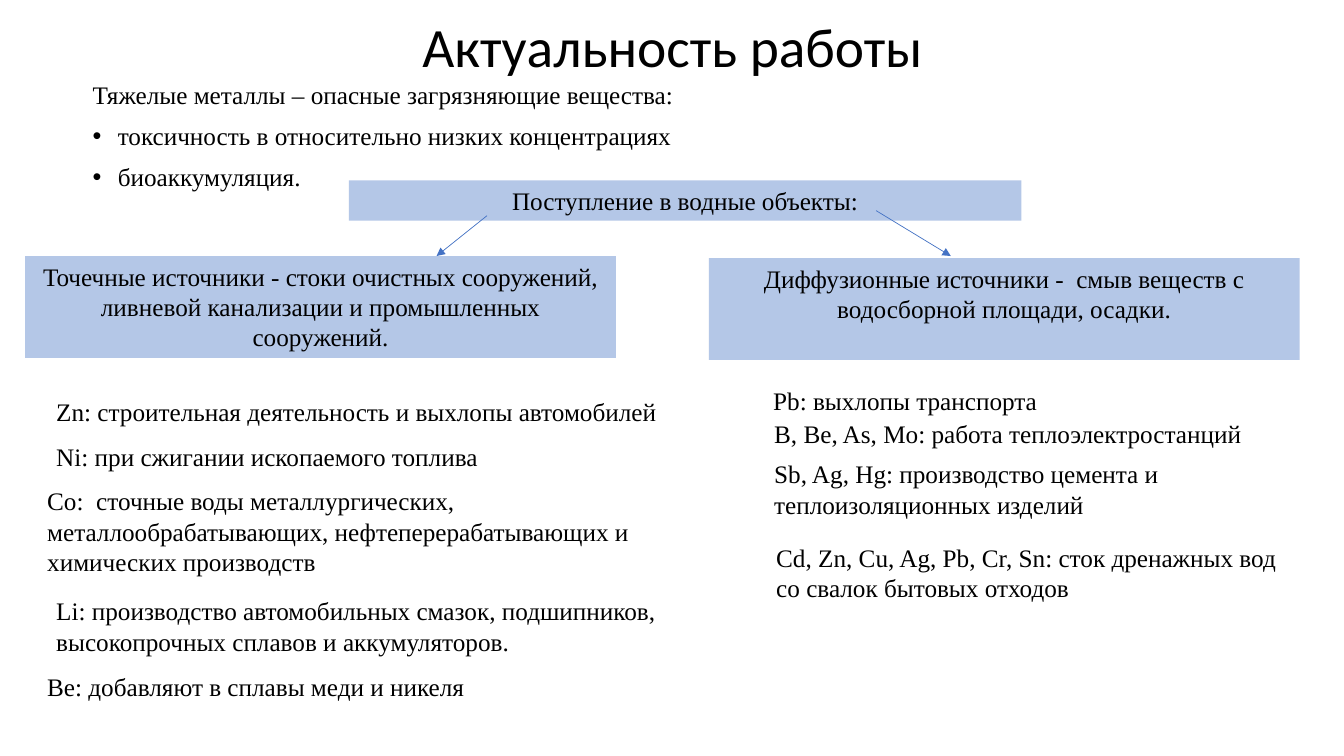
from lxml import etree
from pptx import Presentation
from pptx.dml.color import RGBColor
from pptx.enum.shapes import MSO_CONNECTOR, MSO_SHAPE
from pptx.enum.text import MSO_ANCHOR, MSO_AUTO_SIZE, PP_ALIGN
from pptx.oxml.ns import qn
from pptx.util import Inches, Pt

RECT = MSO_SHAPE.RECTANGLE
LINE = MSO_CONNECTOR.STRAIGHT
TOP, MIDDLE = MSO_ANCHOR.TOP, MSO_ANCHOR.MIDDLE
LEFT, CENTER = PP_ALIGN.LEFT, PP_ALIGN.CENTER
FIXED = MSO_AUTO_SIZE.NONE
COLORS = {"text": "000000", "box": "B4C7E7", "arrow": "4472C4"}


def color(name):
    return RGBColor.from_string(COLORS[name])


def write(shape, lines, align=LEFT, anchor=TOP, size=18, font="Times New Roman"):
    frame = shape.text_frame
    frame.text = "\n".join(lines)
    frame.word_wrap = True
    frame.auto_size = FIXED
    frame.vertical_anchor = anchor
    for para in frame.paragraphs:
        para.alignment = align
        for run in para.runs:
            run.font.size = Pt(size)
            run.font.name = font
            run.font.color.rgb = color("text")


prs = Presentation()
prs.slide_width, prs.slide_height = Inches(13.33), Inches(7.5)
slide = prs.slides.add_slide(prs.slide_layouts[5])
shapes = slide.shapes

# Title
title = shapes.title
title.left, title.top = Inches(0.92), Inches(0.22)
title.width, title.height = Inches(11.5), Inches(0.55)
write(title, ["Актуальность работы"], CENTER, MIDDLE, 39.6, "Calibri")
title.text_frame.paragraphs[0].line_spacing = 0.9

# Introduction with two bullets
intro = shapes.add_textbox(Inches(0.82), Inches(0.77), Inches(11.5), Inches(1.3))
write(intro, [
    "Тяжелые металлы – опасные загрязняющие вещества:",
    "токсичность в относительно низких концентрациях",
    "биоаккумуляция.",
])
for i, para in enumerate(intro.text_frame.paragraphs):
    para.line_spacing = 0.9
    para.space_before = Pt(10)
    if i > 0:
        props = para._p.get_or_add_pPr()
        props.set("marL", str(Inches(0.25)))
        props.set("indent", str(-Inches(0.25)))
        etree.SubElement(props, qn("a:buFont")).set("typeface", "Arial")
        etree.SubElement(props, qn("a:buChar")).set("char", "•")

# Pathway and source boxes
boxes = [
    (3.46, 1.79, 6.67, 0.4, ["Поступление в водные объекты:"]),
    (0.25, 2.54, 5.86, 1.01, [
        "Точечные источники - стоки очистных сооружений,",
        "ливневой канализации и промышленных сооружений.",
    ]),
    (7.03, 2.56, 5.86, 1.01, [
        "Диффузионные источники -  смыв веществ с водосборной площади, осадки.",
    ]),
]
for x, y, w, h, lines in boxes:
    box = shapes.add_shape(RECT, Inches(x), Inches(y), Inches(w), Inches(h))
    box.shadow.inherit = False
    box.fill.solid()
    box.fill.fore_color.rgb = color("box")
    box.line.fill.background()
    write(box, lines, CENTER)

# Arrows to the two sources
for x1, y1, x2, y2 in [(4.83, 2.14, 4.33, 2.54), (8.69, 2.09, 9.43, 2.54)]:
    arrow = shapes.add_connector(LINE, Inches(x1), Inches(y1), Inches(x2), Inches(y2))
    arrow.line.color.rgb = color("arrow")
    arrow.line.width = Pt(0.5)
    etree.SubElement(arrow.line._get_or_add_ln(), qn("a:tailEnd")).set("type", "triangle")
    etree.SubElement(arrow._element.spPr, qn("a:effectLst"))

# Metals by source: point on the left, diffuse on the right
notes = [
    (0.46, 3.88, 6.67, 0.4, "Zn: строительная деятельность и выхлопы автомобилей"),
    (0.46, 4.33, 6.67, 0.4, "Ni: при сжигании ископаемого топлива"),
    (0.37, 4.77, 6.67, 1.01, "Co:  сточные воды металлургических, металлообрабатывающих, "
                             "нефтеперерабатывающих и химических производств"),
    (0.46, 5.86, 6.67, 0.71, "Li: производство автомобильных смазок, подшипников, "
                             "высокопрочных сплавов и аккумуляторов."),
    (0.37, 6.61, 6.67, 0.4, "Be: добавляют в сплавы меди и никеля"),
    (7.57, 3.77, 5.75, 0.4, "Pb: выхлопы транспорта"),
    (7.58, 4.1, 5.75, 0.4, "B, Be, As, Mo: работа теплоэлектростанций"),
    (7.58, 4.5, 5.75, 0.71, "Sb, Ag, Hg: производство цемента и теплоизоляционных изделий"),
    (7.6, 5.33, 5.28, 0.71, "Cd, Zn, Cu, Ag, Pb, Cr, Sn: сток дренажных вод "
                            "со свалок бытовых отходов"),
]
for x, y, w, h, text in notes:
    note = shapes.add_textbox(Inches(x), Inches(y), Inches(w), Inches(h))
    write(note, [text])

prs.save("out.pptx")
